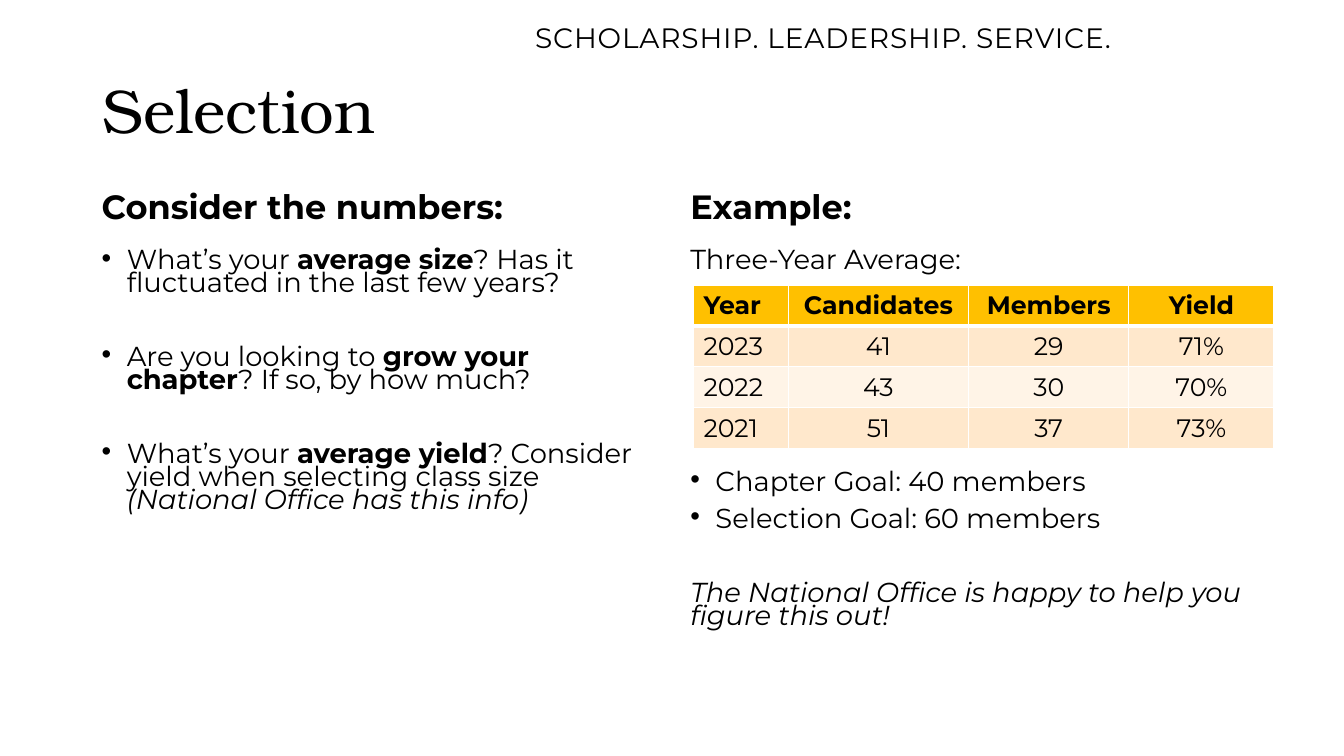
from lxml import etree
from pptx import Presentation
from pptx.dml.color import RGBColor as RGB
from pptx.enum.text import MSO_ANCHOR as Anchor, PP_ALIGN as Align
from pptx.oxml.ns import qn
from pptx.util import Pt

# Content: each paragraph is (format, space before, bulleted, runs); a run is (text, styles)
MOTTO = "SCHOLARSHIP. LEADERSHIP. SERVICE."
TITLE = "Selection"
HEADINGS = ["Consider the numbers:", "Example:"]
GAP = 10
WIDE_GAP = 36.4
TABLE_GAP = 142.1
NUMBERS = [
    (0, True, [("What’s your ", ""), ("average size", "bold"),
               ("? Has it fluctuated in the last few years?", "")]),
    (WIDE_GAP, True, [("Are you looking to ", ""), ("grow your chapter", "bold"),
                      ("? If so, by how much?", "")]),
    (WIDE_GAP, True, [("What’s your ", ""), ("average yield", "bold"),
                      ("? Consider yield when selecting class size ", ""),
                      ("(National Office has this info)", "italic")]),
]
EXAMPLE = [
    (0, False, [("Three-Year Average:", "")]),
    (TABLE_GAP, True, [("Chapter Goal: 40 members", "")]),
    (GAP, True, [("Selection Goal: 60 members", "")]),
    (WIDE_GAP, False, [("The National Office is happy to help you figure this out!", "italic")]),
]
YIELDS = [
    ("Year", "Candidates", "Members", "Yield"),
    ("2023", "41", "29", "71%"),
    ("2022", "43", "30", "70%"),
    ("2021", "51", "37", "73%"),
]

# Formats
COLORS = {"text": "000000", "border": "FFFFFF", "header": "FFC000",
          "odd": "FFE8CC", "even": "FFF4E7"}
SANS = "Montserrat"
FORMATS = {
    "motto": {"name": SANS, "size": Pt(20)},
    "title": {"name": "TeX Gyre Bonum", "size": Pt(44)},
    "heading": {"name": SANS, "size": Pt(24), "bold": True},
    "body": {"name": SANS, "size": Pt(19.6)},
    "header": {"name": SANS, "size": Pt(18), "bold": True},
    "cell": {"name": SANS, "size": Pt(18), "bold": False},
}

# Geometry in points
COLUMNS = [(65.52, 406.08, 406.08, NUMBERS), (486, 433.44, 408.24, EXAMPLE)]
HEADING_TOP, HEADING_HEIGHT = 100.8, 64.8
BODY_TOP, BODY_HEIGHT = 175.68, 290.16
TABLE_LEFT, TABLE_TOP, ROW_HEIGHT = 495.36, 203.76, 29.16
TABLE_WIDTHS = [67.68, 128.88, 114.48, 103.68]
INDENT = 18


def add_run(paragraph, text, kind, style=""):
    run = paragraph.add_run()
    run.text = text
    values = dict(FORMATS[kind])
    if style:
        values[style] = True
    for name, value in values.items():
        setattr(run.font, name, value)
    run.font.color.rgb = RGB.from_string(COLORS["text"])
    return run


def add_bullet(paragraph):
    properties = paragraph._p.get_or_add_pPr()
    properties.set("marL", str(Pt(INDENT)))
    properties.set("indent", str(-Pt(INDENT)))
    font = etree.SubElement(properties, qn("a:buFont"))
    font.set("typeface", "Arial")
    etree.SubElement(properties, qn("a:buChar")).set("char", "•")


def add_text(slide, box, kind, paragraphs, spacing=1.0, anchor=Anchor.TOP):
    frame = slide.shapes.add_textbox(*map(Pt, box)).text_frame
    frame.word_wrap = True
    frame.vertical_anchor = anchor
    for index, (space, bulleted, runs) in enumerate(paragraphs):
        paragraph = frame.add_paragraph() if index else frame.paragraphs[0]
        paragraph.line_spacing = spacing
        paragraph.space_before = Pt(space)
        if bulleted:
            add_bullet(paragraph)
        for text, style in runs:
            add_run(paragraph, text, kind, style)
    return frame


def add_borders(cell, row):
    widths = {"L": 1, "R": 1, "T": 3 if row == 1 else 1, "B": 3 if row == 0 else 1}
    properties = cell._tc.get_or_add_tcPr()
    for side, width in widths.items():
        line = etree.SubElement(properties, qn(f"a:ln{side}"))
        line.set("w", str(Pt(width)))
        fill = etree.SubElement(line, qn("a:solidFill"))
        etree.SubElement(fill, qn("a:srgbClr")).set("val", COLORS["border"])


def add_yield_table(slide):
    frame = slide.shapes.add_table(
        len(YIELDS), len(TABLE_WIDTHS), Pt(TABLE_LEFT), Pt(TABLE_TOP),
        Pt(sum(TABLE_WIDTHS)), Pt(ROW_HEIGHT * len(YIELDS)))
    table = frame.table
    table.horz_banding = False
    for column, width in zip(table.columns, TABLE_WIDTHS):
        column.width = Pt(width)
    for row, values in enumerate(YIELDS):
        table.rows[row].height = Pt(ROW_HEIGHT)
        band = "header" if row == 0 else "odd" if row % 2 else "even"
        for column, text in enumerate(values):
            cell = table.cell(row, column)
            add_borders(cell, row)
            cell.fill.solid()
            cell.fill.fore_color.rgb = RGB.from_string(COLORS[band])
            paragraph = cell.text_frame.paragraphs[0]
            paragraph.alignment = Align.CENTER if column else Align.LEFT
            add_run(paragraph, text, "cell" if row else "header")


def main():
    presentation = Presentation()
    presentation.slide_width, presentation.slide_height = Pt(960), Pt(540)
    slide = presentation.slides.add_slide(presentation.slide_layouts[6])

    # Motto and title
    motto = add_text(slide, (375.12, 10.8, 439.92, 31.68), "motto",
                     [(0, False, [(MOTTO, "")])])
    motto.paragraphs[0].runs[0].font._element.set("spc", "60")
    add_text(slide, (66.24, 28.8, 828, 104.4), "title",
             [(0, False, [(TITLE, "")])], 0.9, Anchor.MIDDLE)

    # Two columns, each a heading above body text
    for heading, (left, heading_width, body_width, body) in zip(HEADINGS, COLUMNS):
        add_text(slide, (left, HEADING_TOP, heading_width, HEADING_HEIGHT), "heading",
                 [(0, False, [(heading, "")])], 0.9, Anchor.BOTTOM)
        add_text(slide, (left, BODY_TOP, body_width, BODY_HEIGHT), "body", body, 0.7)

    # Three-year figures
    add_yield_table(slide)
    presentation.save("out.pptx")


if __name__ == "__main__":
    main()
